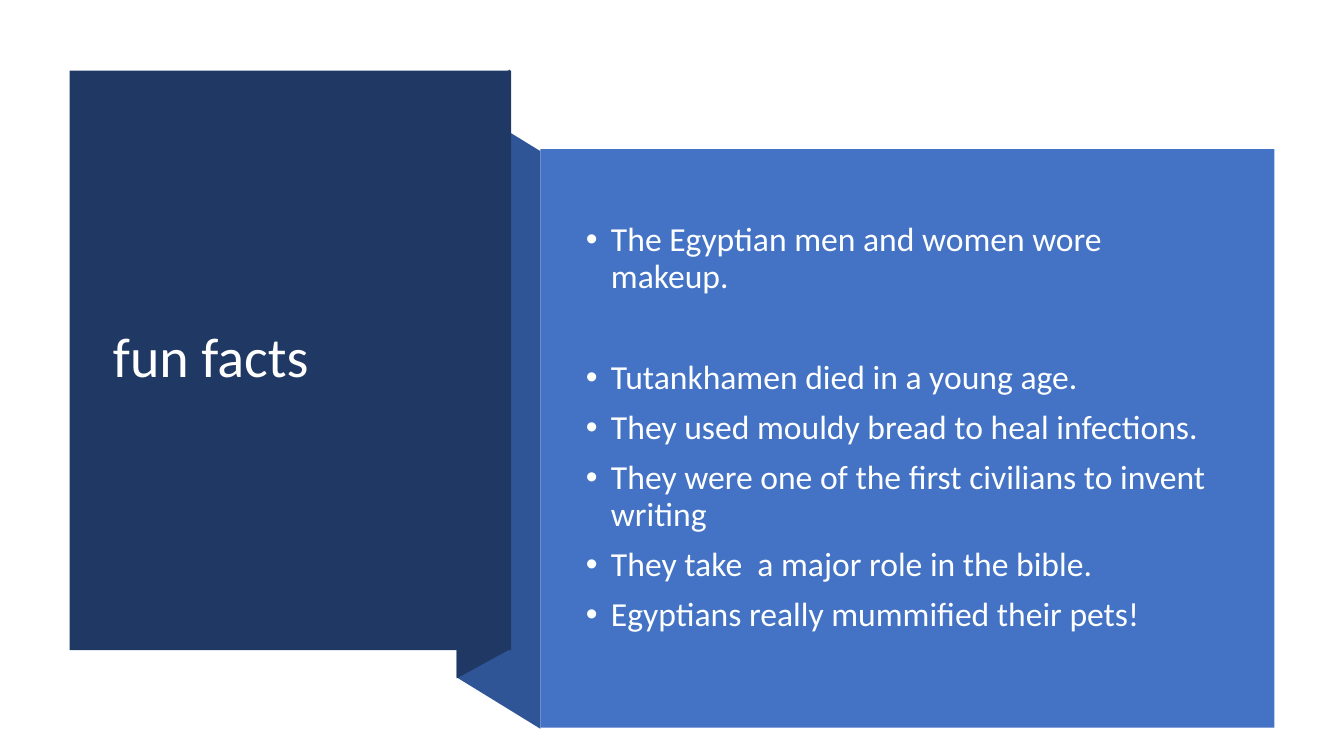
"""Build the "fun facts" slide: a folded ribbon with a title and a bulleted list."""
from lxml.etree import SubElement
from pptx import Presentation
from pptx.dml.color import RGBColor
from pptx.enum.shapes import MSO_SHAPE
from pptx.enum.text import MSO_ANCHOR, MSO_AUTO_SIZE, PP_ALIGN
from pptx.oxml.ns import qn
from pptx.util import Inches, Pt

TITLE = "fun facts"
FACTS = [
    "The Egyptian men and women wore makeup.",
    "Tutankhamen died in a young age.",
    "They used mouldy bread to heal infections.",
    "They were one of the first civilians to invent writing",
    "They take  a major role in the bible.",
    "Egyptians really mummified their pets!",
]
NAVY = RGBColor(0x20, 0x38, 0x64)
MID_BLUE = RGBColor(0x2F, 0x55, 0x97)
BLUE = RGBColor(0x44, 0x72, 0xC4)
WHITE = RGBColor(0xFF, 0xFF, 0xFF)
BODY_WHITE = RGBColor(0xFE, 0xFF, 0xFF)
FONT = "Calibri"
GAP, WIDE_GAP = Pt(10), Pt(46.4)
INDENT = Inches(0.25)

FOLD_X = 4.53
TITLE_PANEL = (0.69, 0.7, 4.38, 5.75)
FACTS_PANEL = (5.36, 1.48, 7.28, 5.74)
TITLE_BOX = (1.02, 1.07, 3.71, 4.99)
FACTS_BOX = (5.71, 1.88, 6.51, 4.74)
FOLDS = [
    ([(FACTS_PANEL[0], 7.23), (FOLD_X, 6.72), (FOLD_X, 0.99), (FACTS_PANEL[0], 1.5)], MID_BLUE),
    ([(5.06, 6.44), (FOLD_X, 6.73), (FOLD_X, 0.98), (5.06, 0.69)], NAVY),
]


def paint(sp, color):
    sp.shadow.inherit = False
    sp.fill.solid()
    sp.fill.fore_color.rgb = color
    sp.line.fill.background()


def add_fold(shapes, points, color):
    start, *rest = [(Inches(x), Inches(y)) for x, y in points]
    builder = shapes.build_freeform(*start)
    builder.add_line_segments(rest, close=True)
    paint(builder.convert_to_shape(), color)


def add_panel(shapes, box, color):
    paint(shapes.add_shape(MSO_SHAPE.RECTANGLE, *map(Inches, box)), color)


def place_text(shapes, sp, box, lines, size, color):
    shapes.element.append(sp.element)
    sp.left, sp.top, sp.width, sp.height = map(Inches, box)
    tf = sp.text_frame
    tf.text = "\n".join(lines)
    tf.word_wrap = True
    tf.auto_size = MSO_AUTO_SIZE.NONE
    tf.vertical_anchor = MSO_ANCHOR.MIDDLE
    for p in tf.paragraphs:
        p.alignment = PP_ALIGN.LEFT
        p.line_spacing = 0.9
        font = p.runs[0].font
        font.name, font.size, font.color.rgb = FONT, Pt(size), color
    return tf.paragraphs


def add_bullet(p):
    pPr = p._p.get_or_add_pPr()
    pPr.set("marL", str(INDENT))
    pPr.set("indent", str(-INDENT))
    SubElement(pPr, qn("a:buFont")).set("typeface", "Arial")
    SubElement(pPr, qn("a:buChar")).set("char", "•")


def main():
    prs = Presentation()
    prs.slide_width, prs.slide_height = Inches(13.33), Inches(7.5)
    slide = prs.slides.add_slide(prs.slide_layouts[1])
    shapes = slide.shapes
    title, body = slide.placeholders
    for points, color in FOLDS:
        add_fold(shapes, points, color)
    add_panel(shapes, TITLE_PANEL, NAVY)
    place_text(shapes, title, TITLE_BOX, [TITLE], 40, WHITE)
    add_panel(shapes, FACTS_PANEL, BLUE)
    for i, p in enumerate(place_text(shapes, body, FACTS_BOX, FACTS, 24, BODY_WHITE)):
        p.space_before = WIDE_GAP if i == 1 else GAP
        add_bullet(p)
    prs.save("out.pptx")


if __name__ == "__main__":
    main()
